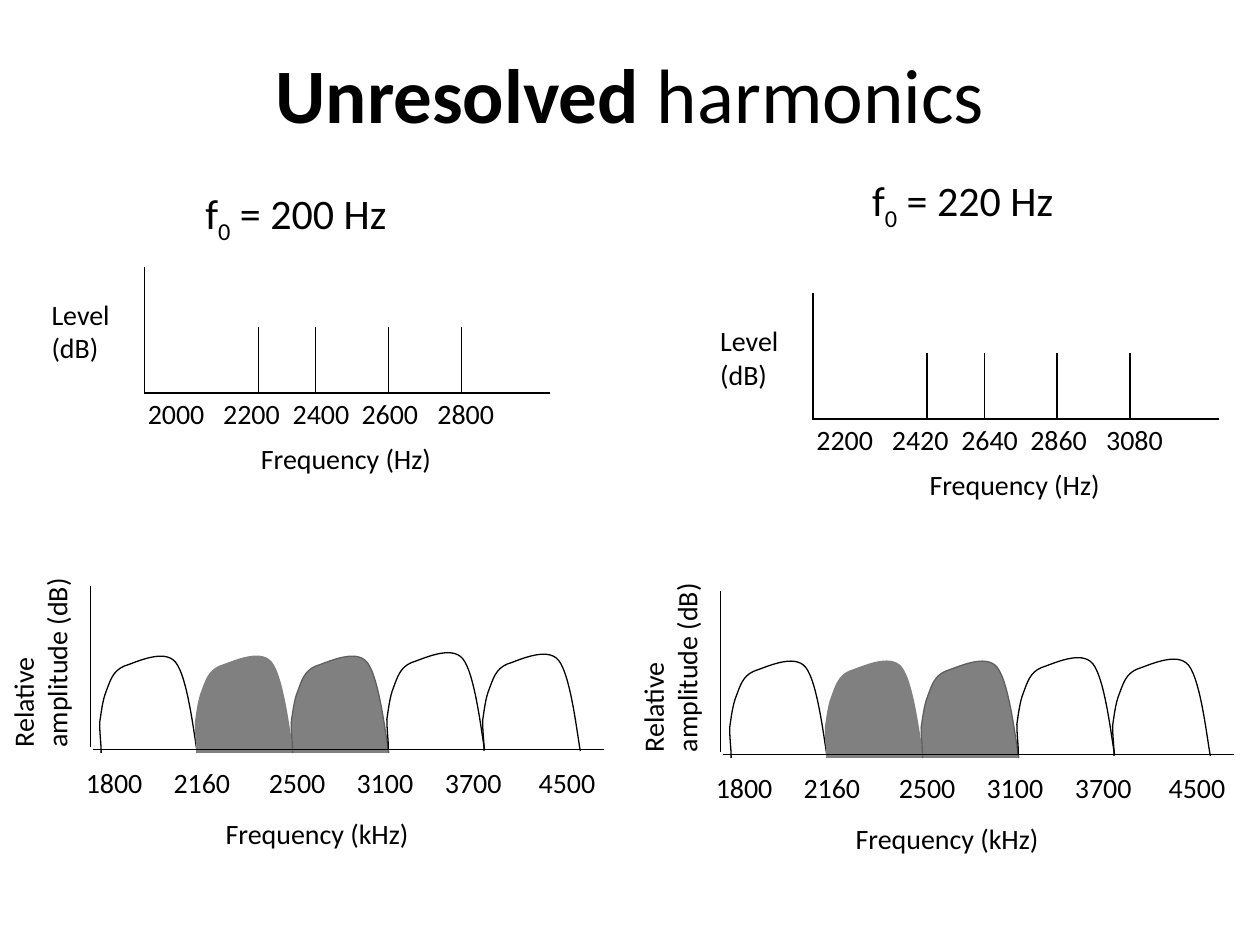
from lxml.etree import SubElement
from pptx import Presentation
from pptx.dml.color import RGBColor
from pptx.enum.text import MSO_ANCHOR, MSO_AUTO_SIZE, PP_ALIGN
from pptx.oxml.ns import qn
from pptx.util import Cm, Pt

FONT = "Calibri"
BLACK = "000000"
GREY = "808080"
DARK_GREY = "5F5F5F"

# Lengths below are centimetres, measured from the corner of each plot's axes.
HARMONICS = [2.3, 3.45, 4.92, 6.39]
HARMONIC_TABS = [1.52, 2.92, 4.31, 5.84]
FILTER_TABS = [1.77, 3.69, 5.46, 7.24, 9.13]
FILTER_LABELS = ["1800", "2160", "2500", "3100", "3700", "4500"]
FILTER_PITCH = 1.93
# Drop below the axis, fill and line colour of each filter.
FILTERS = [
    (0.07, None, BLACK),
    (0.07, GREY, GREY),
    (0.07, GREY, DARK_GREY),
    (0, None, BLACK),
    (0.03, None, BLACK),
]
# Bézier points of one filter: a start, then three points per segment.
FILTER_CURVE = [
    (0, 0),
    (0, -0.2), (-0.03, -0.38), (-0.03, -0.61),
    (0, -0.81), (0.03, -1.07), (0.1, -1.24),
    (0.18, -1.45), (0.23, -1.65), (0.46, -1.75),
    (0.71, -1.83), (1.27, -2.11), (1.5, -1.83),
    (1.75, -1.52), (1.88, -0.3), (1.94, 0),
]


def color(value):
    return RGBColor.from_string(value)


def add_span(para, text, size, bold=False, baseline=None):
    span = para.add_run()
    span.text = text
    span.font.name = FONT
    span.font.size = Pt(size)
    span.font.bold = bold
    span.font.color.rgb = color(BLACK)
    if baseline is not None:
        span.font._element.set("baseline", str(baseline))


def add_box(slide, left, top, width, height):
    box = slide.shapes.add_textbox(Cm(left), Cm(top), Cm(width), Cm(height))
    box.text_frame.word_wrap = False
    box.text_frame.auto_size = MSO_AUTO_SIZE.SHAPE_TO_FIT_TEXT
    return box


def add_label(slide, left, top, width, height, *lines):
    box = add_box(slide, left, top, width, height)
    frame = box.text_frame
    for index, line in enumerate(lines):
        para = frame.add_paragraph() if index else frame.paragraphs[0]
        add_span(para, line, 16)
    return box


def add_tick_labels(slide, left, top, width, labels, tabs):
    """Set the labels on one line, each after the first at a tab stop."""
    box = add_label(slide, left, top, width, 0.94, "\t".join(labels))
    box.text_frame.word_wrap = True
    properties = box.text_frame.paragraphs[0]._p.get_or_add_pPr()
    tab_list = SubElement(properties, qn("a:tabLst"))
    for tab in tabs:
        SubElement(tab_list, qn("a:tab"), pos=str(Cm(tab)), algn="l")


def add_line(slide, x1, y1, x2, y2):
    line = slide.shapes.add_connector(1, Cm(x1), Cm(y1), Cm(x2), Cm(y2))
    line.line.color.rgb = color(BLACK)
    line.line.width = Pt(0.75)
    SubElement(line._element.spPr, qn("a:effectLst"))


def bend_segments(shape):
    """Turn each three straight segments into one cubic Bézier segment."""
    segments = list(shape._element.iter(qn("a:lnTo")))
    outline = segments[0].getparent()
    for first in range(0, len(segments), 3):
        curve = SubElement(outline, qn("a:cubicBezTo"))
        for segment in segments[first:first + 3]:
            curve.append(segment[0])
            outline.remove(segment)


def add_filter(slide, x, y, fill, line):
    points = [(Cm(x + dx), Cm(y + dy)) for dx, dy in FILTER_CURVE]
    builder = slide.shapes.build_freeform(*points[0])
    builder.add_line_segments(points[1:], close=False)
    shape = builder.convert_to_shape()
    bend_segments(shape)
    shape.shadow.inherit = False
    if fill:
        shape.fill.solid()
        shape.fill.fore_color.rgb = color(fill)
    else:
        shape.fill.background()
    shape.line.color.rgb = color(line)
    shape.line.width = Pt(0.75)


def add_spectrum(slide, x, y, labels):
    add_line(slide, x, y - 2.54, x, y + 0.02)
    add_line(slide, x, y, x + 8.18, y)
    for offset in HARMONICS:
        add_line(slide, x + offset, y - 1.33, x + offset, y)
    add_tick_labels(slide, x - 0.18, y - 0.06, 7.57, labels, HARMONIC_TABS)
    add_label(slide, x - 2.12, y - 2.05, 1.7, 1.63, "Level", "(dB)")
    add_label(slide, x + 2.1, y + 0.85, 4.06, 0.94, "Frequency (Hz)")


def add_filter_bank(slide, x, y):
    for index, (drop, fill, line) in enumerate(FILTERS):
        add_filter(slide, x + 0.21 + index * FILTER_PITCH, y + drop, fill, line)
    for start, end in ((0.05, 6.55), (5.77, 10.34)):
        add_line(slide, x + start, y, x + end, y)
    add_line(slide, x, y - 0.05, x, y - 3.3)
    add_tick_labels(slide, x - 0.35, y + 0.2, 11.23, FILTER_LABELS, FILTER_TABS)
    add_label(slide, x + 2.47, y + 1.22, 4.37, 0.94, "Frequency (kHz)")
    level = add_label(slide, x - 3, y - 2.59, 3.96, 1.63, "Relative", "amplitude (dB)")
    level.rotation = 270


def add_title(slide):
    box = add_box(slide, 1.4, 0.68, 22.6, 2.38)
    frame = box.text_frame
    frame.word_wrap = True
    frame.auto_size = MSO_AUTO_SIZE.NONE
    frame.vertical_anchor = MSO_ANCHOR.MIDDLE
    para = frame.paragraphs[0]
    para.alignment = PP_ALIGN.CENTER
    add_span(para, "Unresolved ", 44, bold=True)
    add_span(para, "harmonics", 44)


def add_fundamental(slide, left, top, value):
    para = add_box(slide, left, top, 4.24, 1.27).text_frame.paragraphs[0]
    add_span(para, "f", 24)
    add_span(para, "0", 24, baseline=-25000)
    add_span(para, f" = {value} Hz", 24)


def main():
    deck = Presentation()
    deck.slide_width, deck.slide_height = Cm(25.4), Cm(19.05)
    slide = deck.slides.add_slide(deck.slide_layouts[6])
    add_title(slide)
    add_fundamental(slide, 3.89, 3.66, 200)
    add_fundamental(slide, 17.33, 3.4, 220)
    add_spectrum(slide, 2.91, 7.92, ["2000", "2200", "2400", "2600", "2800"])
    add_spectrum(slide, 16.39, 8.45, ["2200", "2420", "2640", "2860", "3080"])
    add_filter_bank(slide, 1.83, 15.11)
    add_filter_bank(slide, 14.53, 15.21)
    deck.save("out.pptx")


if __name__ == "__main__":
    main()
